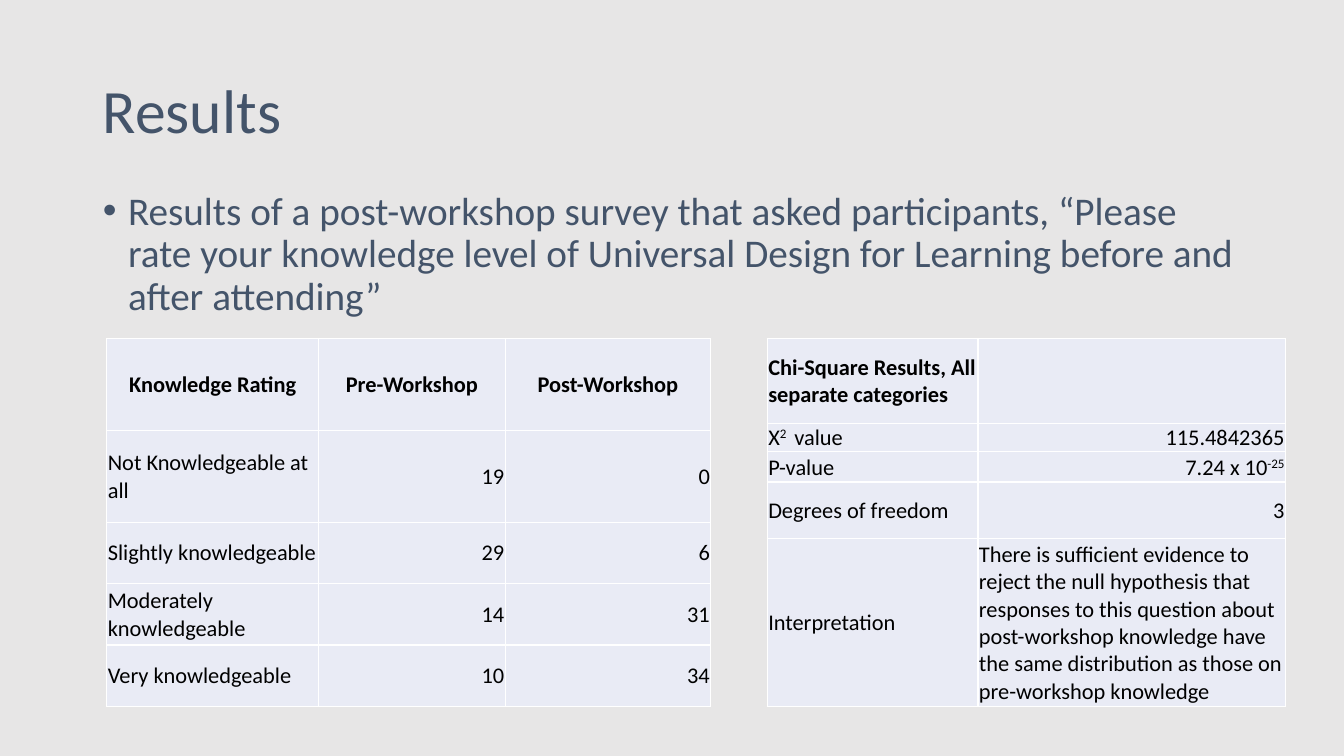
"""Build the survey results slide with its ratings and chi-square tables."""
import lxml.etree
import pptx
import pptx.dml.color
import pptx.enum.text
import pptx.oxml
import pptx.oxml.ns
import pptx.util

Inches, Pt = pptx.util.Inches, pptx.util.Pt
ALIGN, ANCHOR = pptx.enum.text.PP_ALIGN, pptx.enum.text.MSO_ANCHOR


def rgb(value):
    return pptx.dml.color.RGBColor.from_string(value)


def style(r, size, color, bold=False):
    r.font.name, r.font.size, r.font.bold = "Calibri", Pt(size), bold
    r.font.color.rgb = rgb(color)


prs = pptx.Presentation()
prs.slide_width, prs.slide_height = Inches(13.33), Inches(7.5)
s = prs.slides.add_slide(prs.slide_layouts[1])
s.background.fill.solid()
s.background.fill.fore_color.rgb = rgb("E7E6E6")

title, body = s.placeholders
question = ("Results of a post-workshop survey that asked participants, “Please rate your "
            "knowledge level of Universal Design for Learning before and after attending”")
for sp, top, text, size, anchor in (
    (title, 0.4, "Results", 44, ANCHOR.MIDDLE),
    (body, 1.85, question, 28, ANCHOR.TOP),
):
    sp.left, sp.top, sp.width, sp.height = Inches(0.92), Inches(top), Inches(11.5), Inches(1.45)
    tf = sp.text_frame
    tf.text = text
    tf.auto_size = pptx.enum.text.MSO_AUTO_SIZE.NONE
    tf.vertical_anchor = anchor
    p = tf.paragraphs[0]
    p.alignment, p.line_spacing = ALIGN.LEFT, 0.9
    style(p.runs[0], size, "44546A")

p.space_before = Pt(10)
pPr = p._p.get_or_add_pPr()
pPr.set("marL", str(Inches(0.25)))
pPr.set("indent", str(Inches(-0.25)))
lxml.etree.SubElement(pPr, pptx.oxml.ns.qn("a:buChar"), char="•")

ratings = [
    ["Knowledge Rating", "Pre-Workshop", "Post-Workshop"],
    ["Not Knowledgeable at all", "19", "0"],
    ["Slightly knowledgeable", "29", "6"],
    ["Moderately knowledgeable", "14", "31"],
    ["Very knowledgeable", "10", "34"],
]
# Carets enclose superscript text.
chi_square = [
    ["Chi-Square Results, All separate categories", ""],
    ["X^2 ^ value", "115.4842365"],
    ["P-value", "7.24 x 10^-25"],
    ["Degrees of freedom", "3"],
    ["Interpretation", "There is sufficient evidence to reject the null hypothesis that "
     "responses to this question about post-workshop knowledge have the same "
     "distribution as those on pre-workshop knowledge"],
]
border = ('<a:{} xmlns:a="http://schemas.openxmlformats.org/drawingml/2006/main" w="12700">'
          '<a:solidFill><a:srgbClr val="FFFFFF"/></a:solidFill></a:{}>')

for rows, left, widths, heights, header_align in (
    (ratings, 1.06, [2.1, 1.85, 2.04], [0.91, 0.91, 0.61, 0.61, 0.61], ALIGN.CENTER),
    (chi_square, 7.61, [2.09, 3.05], [0.84, 0.28, 0.3, 0.56, 1.67], ALIGN.LEFT),
):
    table = s.shapes.add_table(len(rows), len(widths), Inches(left), Inches(3.36),
                               Inches(sum(widths)), Inches(sum(heights))).table
    for column, width in zip(table.columns, widths):
        column.width = Inches(width)
    for i, (row, height) in enumerate(zip(rows, heights)):
        table.rows[i].height = Inches(height)
        for j, text in enumerate(row):
            cell = table.cell(i, j)
            cell.margin_left = cell.margin_right = cell.margin_top = Inches(0.01)
            cell.margin_bottom = 0
            cell.vertical_anchor = ANCHOR.MIDDLE
            for side in ("lnL", "lnR", "lnT", "lnB"):
                cell._tc.get_or_add_tcPr().append(pptx.oxml.parse_xml(border.format(side, side)))
            cell.fill.solid()
            cell.fill.fore_color.rgb = rgb("E9EBF5")
            p = cell.text_frame.paragraphs[0]
            if i == 0:
                p.alignment = header_align
            else:
                p.alignment = ALIGN.RIGHT if j and len(text) < 20 else ALIGN.LEFT
            for k, part in enumerate(text.split("^") if text else []):
                r = p.add_run()
                r.text = part
                style(r, 16, "000000", bold=i == 0)
                if k % 2:
                    r.font._element.set("baseline", "30000")

prs.save("out.pptx")
